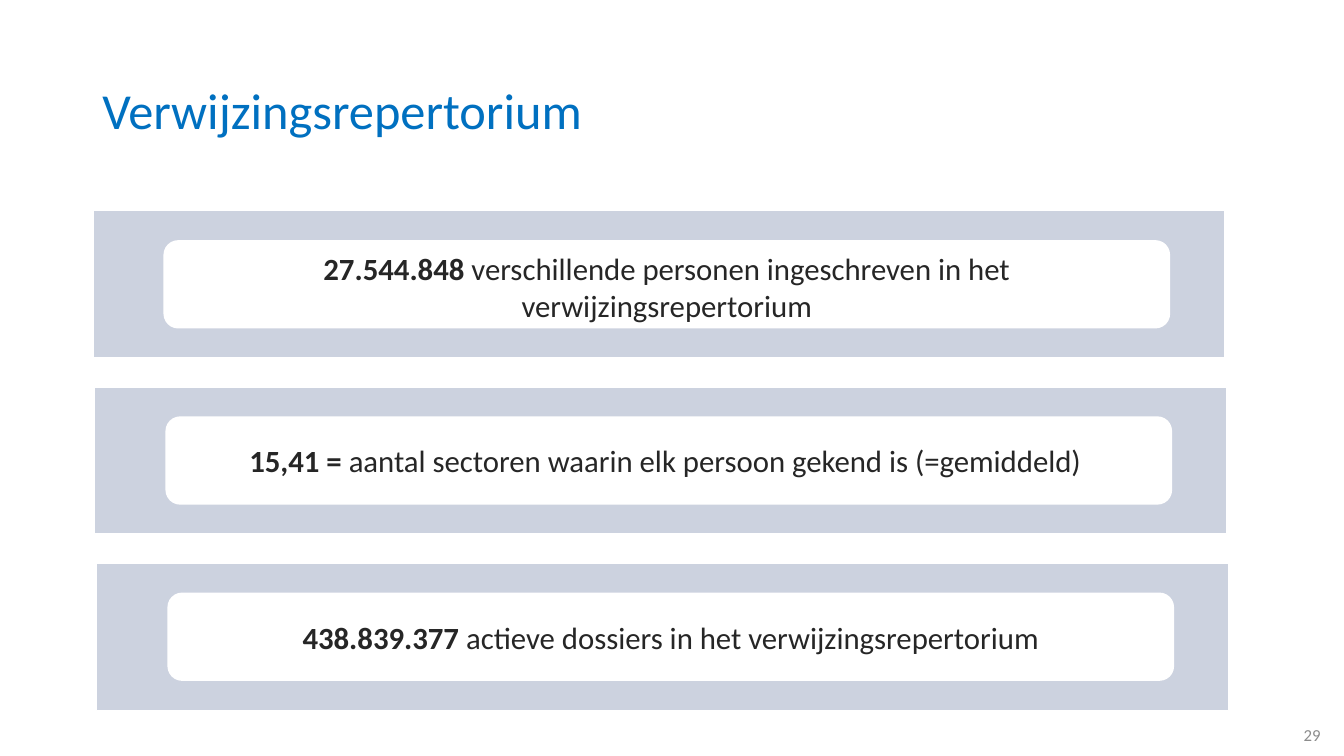
from pptx import Presentation
from pptx.dml.color import RGBColor
from pptx.enum.shapes import MSO_SHAPE
from pptx.enum.text import MSO_ANCHOR, PP_ALIGN
from pptx.oxml.ns import qn
from pptx.util import Cm, Pt
from lxml import etree

RECTANGLE, ROUNDED = MSO_SHAPE.RECTANGLE, MSO_SHAPE.ROUNDED_RECTANGLE
TOP, MIDDLE = MSO_ANCHOR.TOP, MSO_ANCHOR.MIDDLE
LEFT, CENTER, RIGHT = PP_ALIGN.LEFT, PP_ALIGN.CENTER, PP_ALIGN.RIGHT

FIGURES = [
    ("27.544.848 ", "verschillende personen ingeschreven in het verwijzingsrepertorium", TOP),
    ("15,41 = ", "aantal sectoren waarin elk persoon gekend is (=gemiddeld) ", MIDDLE),
    ("438.839.377 ", "actieve dossiers in het verwijzingsrepertorium", MIDDLE),
]


def color(value):
    """Turn a hex string into a colour."""
    return RGBColor.from_string(value)


def write(box, spans, size, ink, align, anchor):
    """Write one paragraph of (text, bold) spans into a box."""
    frame = box.text_frame
    frame.word_wrap = True
    frame.vertical_anchor = anchor
    para = frame.paragraphs[0]
    para.alignment = align
    for text, bold in spans:
        span = para.add_run()
        span.text = text
        span.font.name = "Calibri"
        span.font.size = Pt(size)
        span.font.bold = bold
        span.font.color.rgb = color(ink)
    return para


def add_block(page, kind, left, top, width, height, fill):
    """Add a filled shape without shadow or outline."""
    block = page.shapes.add_shape(kind, Cm(left), Cm(top), Cm(width), Cm(height))
    block.shadow.inherit = False
    block.fill.solid()
    block.fill.fore_color.rgb = color(fill)
    block.line.fill.background()
    return block


def add_title(page, left, top, width, height):
    """Place the slide title in the given box."""
    box = page.shapes.add_textbox(Cm(left), Cm(top), Cm(width), Cm(height))
    para = write(box, [("Verwijzingsrepertorium", False)], 36, "0070C0", LEFT, MIDDLE)
    para.line_spacing = 0.9


def add_page_number(page, left, top, width, height):
    """Place the page number in the given box."""
    box = page.shapes.add_textbox(Cm(left), Cm(top), Cm(width), Cm(height))
    write(box, [("29", False)], 12, "8C8C8C", RIGHT, MIDDLE)


def add_figure(page, left, top, width, height, number, label, anchor):
    """Place a tinted band with a white card holding a key figure."""
    band = add_block(page, RECTANGLE, left, top, width, height, "002060")
    tint = band.fill._xPr.find(qn("a:solidFill"))[0]
    etree.SubElement(tint, qn("a:alpha")).set("val", "20000")
    band.line.color.rgb = color("FFFFFF")
    band.line.width = Pt(1)
    card_height = height * 0.6
    card = add_block(page, ROUNDED, left + 1.78, top + (height - card_height) / 2,
                     width - 3.15, card_height, "FFFFFF")
    write(card, [(number, True), (label, False)], 22, "262626", CENTER, anchor)


def main():
    """Build the slide and save it."""
    deck = Presentation()
    deck.slide_width, deck.slide_height = Cm(33.87), Cm(19.05)
    page = deck.slides.add_slide(deck.slide_layouts[6])
    add_title(page, 2.33, 1.01, 29.21, 3.68)
    add_page_number(page, 25.91, 18.01, 7.62, 1.01)
    for index, (number, label, anchor) in enumerate(FIGURES):
        add_figure(page, 2.34 + 0.05 * index, 5.31 + 4.44 * index, 28.52, 3.71,
                   number, label, anchor)
    deck.save("out.pptx")


if __name__ == "__main__":
    main()
